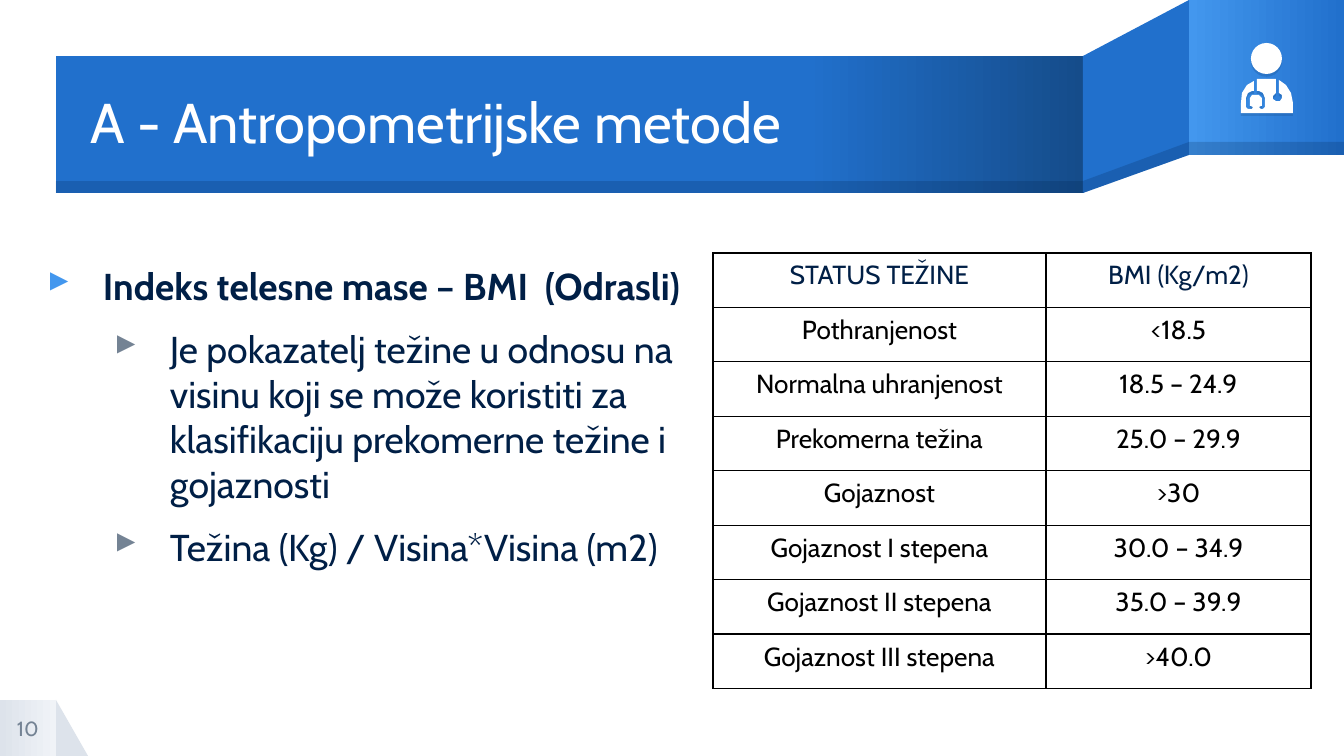
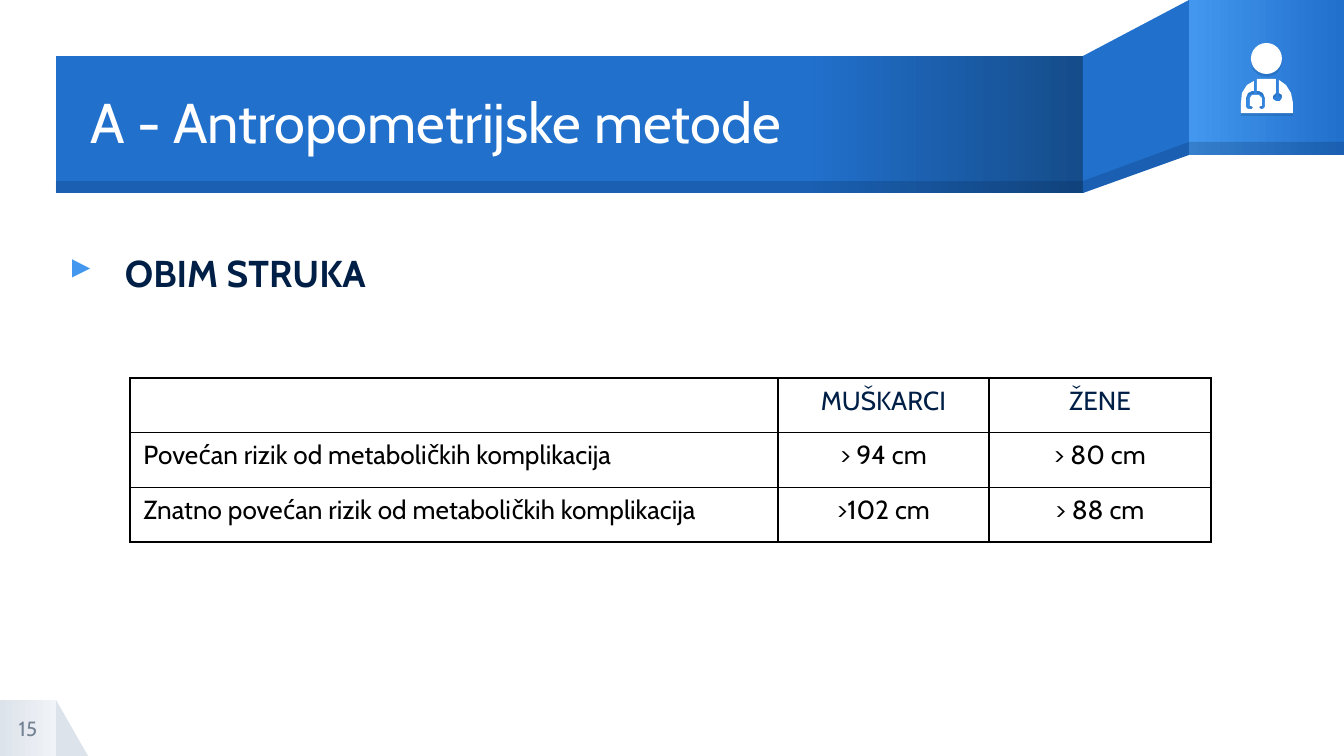
"""Build two slides on anthropometric methods with a shared ribbon header."""
from copy import deepcopy

from lxml.etree import SubElement
from pptx import Presentation
from pptx.dml.color import RGBColor
from pptx.enum.shapes import MSO_SHAPE
from pptx.enum.text import MSO_ANCHOR, PP_ALIGN
from pptx.oxml.ns import qn
from pptx.util import Emu, Pt

SCALE = 9144000 / 1344
FONT = "Cabin"
WHITE = RGBColor(0xFF, 0xFF, 0xFF)
BLACK = RGBColor(0x00, 0x00, 0x00)
NAVY = RGBColor(0x00, 0x1F, 0x46)
BLUE = RGBColor(0x21, 0x70, 0xCC)
LIGHT_BLUE = RGBColor(0x43, 0x97, 0xEE)
DARK_BLUE = RGBColor(0x15, 0x4C, 0x8A)
SLATE = RGBColor(0x74, 0x83, 0x94)
MIST = RGBColor(0xDD, 0xE3, 0xEB)
PALE = RGBColor(0xF0, 0xF3, 0xF7)

DOCTOR_HEAD = (1251, 43, 31, 31)
DOCTOR_BODY = [
    (1279, 80), (1279, 93), (1282, 95), (1282, 98), (1280, 101), (1276, 101),
    (1273, 99), (1273, 96), (1276, 93), (1276, 79), (1257, 79), (1257, 91),
    (1259, 91), (1263, 93), (1265, 98), (1265, 107), (1263, 109), (1261, 109),
    (1259, 107), (1261, 106), (1262, 106), (1262, 98), (1259, 95), (1252, 95),
    (1250, 98), (1250, 106), (1251, 106), (1253, 107), (1252, 109), (1248, 109),
    (1246, 107), (1246, 98), (1248, 93), (1252, 91), (1254, 91), (1254, 81),
    (1247, 85), (1242, 93), (1241, 103), (1241, 113), (1293, 113), (1293, 103),
    (1291, 93), (1286, 85),
]

SLIDES = [
    {
        "number": "10",
        "title_width": 993,
        "body_at": (36, 263, 667, 415),
        "body": [
            (0, "Indeks telesne mase – BMI  (Odrasli)"),
            (1, "Je pokazatelj težine u odnosu na visinu koji se može koristiti "
                "za klasifikaciju prekomerne težine i gojaznosti"),
            (1, "Težina (Kg) / Visina*Visina (m2)"),
        ],
        "table_at": (713, 253, 598, 436),
        "columns": (333, 265),
        "left_labels": False,
        "rows": [
            ("STATUS TEŽINE", "BMI (Kg/m2)"),
            ("Pothranjenost", "<18.5"),
            ("Normalna uhranjenost", "18.5 – 24.9"),
            ("Prekomerna težina", "25.0 – 29.9"),
            ("Gojaznost", ">30"),
            ("Gojaznost I stepena", "30.0 – 34.9"),
            ("Gojaznost II stepena", "35.0 – 39.9"),
            ("Gojaznost III stepena", ">40.0"),
        ],
    },
    {
        "number": "15",
        "title_width": 1100,
        "body_at": (58, 250, 1153, 159),
        "body": [(0, "OBIM STRUKA")],
        "table_at": (130, 378, 1081, 164),
        "columns": (648, 211, 222),
        "left_labels": True,
        "rows": [
            ("", "MUŠKARCI", "ŽENE"),
            ("Povećan rizik od metaboličkih komplikacija", "> 94 cm", "> 80 cm"),
            ("Znatno povećan rizik od metaboličkih komplikacija", ">102 cm", "> 88 cm"),
        ],
    },
]


def px(*lengths):
    return [Emu(round(length * SCALE)) for length in lengths]


def paint(shape, stops, alpha=None):
    shape.shadow.inherit = False
    shape.line.fill.background()
    if len(stops) == 1:
        shape.fill.solid()
        shape.fill.fore_color.rgb = stops[0][1]
    else:
        shape.fill.gradient()
        shape.fill.gradient_angle = 0
        stop_list = shape.element.find(".//" + qn("a:gsLst"))
        for _ in stops[2:]:
            stop_list.insert(1, deepcopy(stop_list[0]))
        for stop, (position, colour) in zip(shape.fill.gradient_stops, stops):
            stop.position = position
            stop.color.rgb = colour
    if alpha:
        colour_element = shape.element.find(".//" + qn("a:srgbClr"))
        SubElement(colour_element, qn("a:alpha"), val=str(alpha * 1000))


deck = Presentation()
deck.slide_width, deck.slide_height = px(1344, 756)
layout = deck.slide_layouts[5]
for holder in list(layout.placeholders)[1:]:
    holder.element.getparent().remove(holder.element)
pages = [deck.slides.add_slide(layout) for _ in SLIDES]

blocks = [
    (MSO_SHAPE.RIGHT_TRIANGLE, (56, 700, 32, 56), [(0, MIST)], None),
    (MSO_SHAPE.RECTANGLE, (0, 700, 56, 56), [(0, MIST), (1, PALE)], None),
    (MSO_SHAPE.RECTANGLE, (1189, 0, 155, 155), [(0, LIGHT_BLUE), (1, BLUE)], None),
    (MSO_SHAPE.RECTANGLE, (56, 56, 1028, 137),
     [(0, BLUE), (0.73, BLUE), (1, DARK_BLUE)], None),
    (MSO_SHAPE.RECTANGLE, (1189, 142, 155, 13), [(0, NAVY)], 20),
    (MSO_SHAPE.RECTANGLE, (56, 181, 1028, 12), [(0, NAVY)], 20),
]
folds = [
    ([(1189, 0), (1083, 56), (1083, 193), (1189, 155)], BLUE, None),
    ([(1189, 142), (1083, 181), (1083, 193), (1189, 155)], NAVY, 20),
]
for preset, place, stops, alpha in blocks:
    block = pages[0].shapes.add_shape(preset, *px(*place))
    paint(block, stops, alpha)
    layout.shapes.element.append(block.element)
for points, colour, alpha in folds:
    builder = pages[0].shapes.build_freeform(*points[0], scale=SCALE)
    builder.add_line_segments(points[1:], close=True)
    fold = builder.convert_to_shape()
    paint(fold, [(0, colour)], alpha)
    layout.shapes.element.append(fold.element)

for page, content in zip(pages, SLIDES):
    title = page.shapes.title
    title.left, title.top, title.width, title.height = px(90, 58, content["title_width"], 135)
    title.text_frame.text = "A - Antropometrijske metode"
    body = page.shapes.add_textbox(*px(*content["body_at"]))
    number = page.shapes.add_textbox(*px(0, 700, 56, 56))
    number.text_frame.text = content["number"]

    for box, anchor in ((title, MSO_ANCHOR.MIDDLE), (body, MSO_ANCHOR.TOP),
                        (number, MSO_ANCHOR.MIDDLE)):
        frame = box.text_frame
        frame.word_wrap = True
        frame.vertical_anchor = anchor
        frame.margin_left = frame.margin_top = frame.margin_right = frame.margin_bottom = 0

    heading = title.text_frame.paragraphs[0]
    heading.alignment = PP_ALIGN.LEFT
    heading.line_spacing = 0.9
    page_label = number.text_frame.paragraphs[0]
    page_label.alignment = PP_ALIGN.CENTER
    for para, size, colour in ((heading, 30, WHITE), (page_label, 11, SLATE)):
        para.font.name = FONT
        para.font.size = Pt(size)
        para.font.color.rgb = colour

    for index, (level, text) in enumerate(content["body"]):
        para = body.text_frame.paragraphs[0] if index == 0 else body.text_frame.add_paragraph()
        para.text = text
        para.level = level
        if index:
            para.space_before = Pt(10)
        margin, hanging = px(67 * (level + 1), -56)
        properties = para._p.get_or_add_pPr()
        properties.set("marL", str(margin))
        properties.set("indent", str(hanging))
        bullet_colour = SubElement(properties, qn("a:buClr"))
        SubElement(bullet_colour, qn("a:srgbClr"), val=str(SLATE if level else LIGHT_BLUE))
        SubElement(properties, qn("a:buChar"), char="▸")
        para.font.name = FONT
        para.font.size = Pt(20)
        para.font.bold = level == 0
        para.font.color.rgb = NAVY

    builder = page.shapes.build_freeform(*DOCTOR_BODY[0], scale=SCALE)
    builder.add_line_segments(DOCTOR_BODY[1:], close=True)
    doctor_body = builder.convert_to_shape()
    doctor_head = page.shapes.add_shape(MSO_SHAPE.OVAL, *px(*DOCTOR_HEAD))
    for part in (doctor_body, doctor_head):
        paint(part, [(0, WHITE)])
        effects = part.element.find(".//" + qn("a:effectLst"))
        shadow = SubElement(effects, qn("a:outerShdw"), dist=str(Pt(1.5)), dir="5400000")
        shade = SubElement(shadow, qn("a:srgbClr"), val=str(NAVY))
        SubElement(shade, qn("a:alpha"), val="15000")

    rows, columns = content["rows"], content["columns"]
    table = page.shapes.add_table(len(rows), len(columns), *px(*content["table_at"])).table
    table.first_row = False
    table.horz_banding = False
    for column, width in zip(table.columns, px(*columns)):
        column.width = width
    for row_index, row in enumerate(rows):
        for column_index, text in enumerate(row):
            cell = table.cell(row_index, column_index)
            cell.text = text
            cell_properties = cell._tc.get_or_add_tcPr()
            for side in ("a:lnL", "a:lnR", "a:lnT", "a:lnB"):
                border = SubElement(cell_properties, qn(side), w=str(Pt(0.75)))
                border_fill = SubElement(border, qn("a:solidFill"))
                SubElement(border_fill, qn("a:srgbClr"), val=str(BLACK))
            cell.fill.background()
            para = cell.text_frame.paragraphs[0]
            is_label = content["left_labels"] and column_index == 0
            para.alignment = PP_ALIGN.LEFT if is_label else PP_ALIGN.CENTER
            para.font.name = FONT
            para.font.size = Pt(14)
            para.font.color.rgb = BLACK if row_index else NAVY

deck.save("out.pptx")
